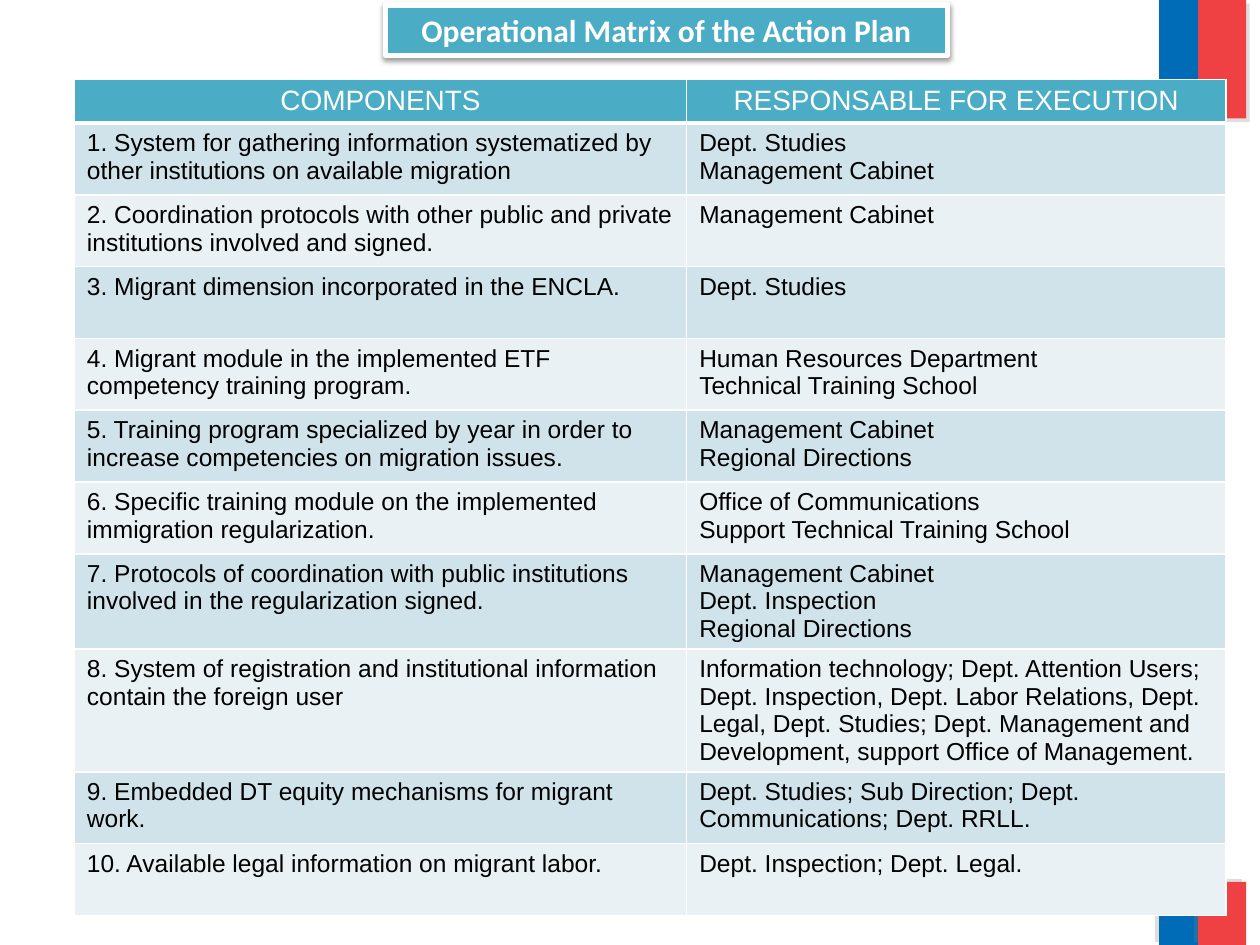
from lxml import etree
from pptx import Presentation
from pptx.dml.color import RGBColor
from pptx.enum.shapes import MSO_SHAPE
from pptx.enum.text import MSO_ANCHOR, MSO_AUTO_SIZE, PP_ALIGN
from pptx.oxml import parse_xml
from pptx.oxml.ns import nsdecls, qn
from pptx.util import Inches, Pt

RECTANGLE = MSO_SHAPE.RECTANGLE
LEFT, CENTER = PP_ALIGN.LEFT, PP_ALIGN.CENTER
TOP, MIDDLE = MSO_ANCHOR.TOP, MSO_ANCHOR.MIDDLE
FIT_SHAPE = MSO_AUTO_SIZE.SHAPE_TO_FIT_TEXT

WHITE = RGBColor(0xFF, 0xFF, 0xFF)
BLACK = RGBColor(0x00, 0x00, 0x00)
GRAY = RGBColor(0x80, 0x80, 0x80)
BLUE = RGBColor(0x00, 0x6C, 0xB7)
RED = RGBColor(0xEF, 0x41, 0x44)
TEAL = RGBColor(0x4B, 0xAC, 0xC6)
BANDS = [RGBColor(0xD0, 0xE3, 0xEA), RGBColor(0xE9, 0xF1, 0xF5)]

HEADINGS = ("COMPONENTS", "RESPONSABLE FOR EXECUTION")
ENTRIES = [
    ("1. System for gathering information systematized by other institutions on available migration",
     "Dept. Studies\nManagement Cabinet"),
    ("2. Coordination protocols with other public and private institutions involved and signed.",
     "Management Cabinet"),
    ("3. Migrant dimension incorporated in the ENCLA.", "Dept. Studies"),
    ("4. Migrant module in the implemented ETF competency training program.",
     "Human Resources Department\nTechnical Training School"),
    ("5. Training program specialized by year in order to increase competencies on migration issues.",
     "Management Cabinet\nRegional Directions"),
    ("6. Specific training module on the implemented immigration regularization.",
     "Office of Communications\nSupport Technical Training School"),
    ("7. Protocols of coordination with public institutions involved in the regularization signed.",
     "Management Cabinet\nDept. Inspection\nRegional Directions"),
    ("8. System of registration and institutional information contain the foreign user",
     "Information technology; Dept. Attention Users; Dept. Inspection, Dept. Labor Relations, "
     "Dept. Legal, Dept. Studies; Dept. Management and Development, support Office of Management."),
    ("9. Embedded DT equity mechanisms for migrant work.",
     "Dept. Studies; Sub Direction; Dept. Communications; Dept. RRLL."),
    ("10. Available legal information on migrant labor.", "Dept. Inspection; Dept. Legal."),
]

deck = Presentation()
deck.slide_width, deck.slide_height = Inches(10), Inches(7.5)
page = deck.slides.add_slide(deck.slide_layouts[6])
COLUMN = deck.slide_width / 100
ROW = deck.slide_height / 75


def write_text(frame, text, size=14, font="Arial", color=BLACK, bold=False, align=LEFT):
    for index, line in enumerate(text.split("\n")):
        para = frame.paragraphs[0] if index == 0 else frame.add_paragraph()
        para.alignment = align
        span = para.add_run()
        span.text = line
        span.font.size = Pt(size)
        span.font.name = font
        span.font.bold = bold
        span.font.color.rgb = color


def add_block(left, top, width, height, fill, shade, opacity, blur, distance, angle):
    box = page.shapes.add_shape(RECTANGLE, int(left * COLUMN), int(top * ROW),
                                int(width * COLUMN), int(height * ROW))
    box.fill.solid()
    box.fill.fore_color.rgb = fill
    box.line.fill.background()
    box.shadow.inherit = False
    effects = box._element.spPr.find(qn("a:effectLst"))
    shadow = etree.SubElement(effects, qn("a:outerShdw"), blurRad=str(Pt(blur)),
                              dist=str(Pt(distance)), dir=str(angle * 60000),
                              algn="ctr", rotWithShape="0")
    tint = etree.SubElement(shadow, qn("a:srgbClr"), val=str(shade))
    etree.SubElement(tint, qn("a:alpha"), val=str(opacity * 1000))
    return box


for top, height, angle in ((0, 9.4, 45), (70, 5, 215)):
    for left, width, color in ((92, 3.1, BLUE), (95.1, 3.8, RED)):
        add_block(left, top, width, height, color, GRAY, 25, 0, 3, angle)

holder = page.shapes.add_table(len(ENTRIES) + 1, len(HEADINGS), int(5.9 * COLUMN),
                               int(6.3 * ROW), int(91.4 * COLUMN), int(67.3 * ROW))
table = holder.table
table.horz_banding = False
for column, width in zip(table.columns, (48.6, 42.8)):
    column.width = int(width * COLUMN)

for row_index, entry in enumerate([HEADINGS] + ENTRIES):
    heading = row_index == 0
    table.rows[row_index].height = int((3.1 if heading else 5.7) * ROW)
    for column_index, text in enumerate(entry):
        cell = table.cell(row_index, column_index)
        cell.vertical_anchor = TOP
        for side in "LRTB":
            weight = Pt(3 if heading and side == "B" else 1)
            cell._tc.get_or_add_tcPr().append(parse_xml(
                f'<a:ln{side} {nsdecls("a")} w="{weight}"><a:solidFill>'
                f'<a:srgbClr val="{WHITE}"/></a:solidFill></a:ln{side}>'))
        cell.fill.solid()
        cell.fill.fore_color.rgb = TEAL if heading else BANDS[(row_index - 1) % 2]
        if heading:
            write_text(cell.text_frame, text, size=16, color=WHITE, align=CENTER)
        else:
            write_text(cell.text_frame, text)
holder.height = int(67.3 * ROW)

title = add_block(30.6, 0.4, 44.6, 4, TEAL, BLACK, 38, 3.1, 1.6, 90)
title.line.color.rgb = WHITE
title.line.width = Pt(3)
title.text_frame.word_wrap = True
title.text_frame.auto_size = FIT_SHAPE
title.text_frame.vertical_anchor = MIDDLE
write_text(title.text_frame, "Operational Matrix of the Action Plan",
           size=18, font="Calibri", color=WHITE, bold=True, align=CENTER)

deck.save("out.pptx")
